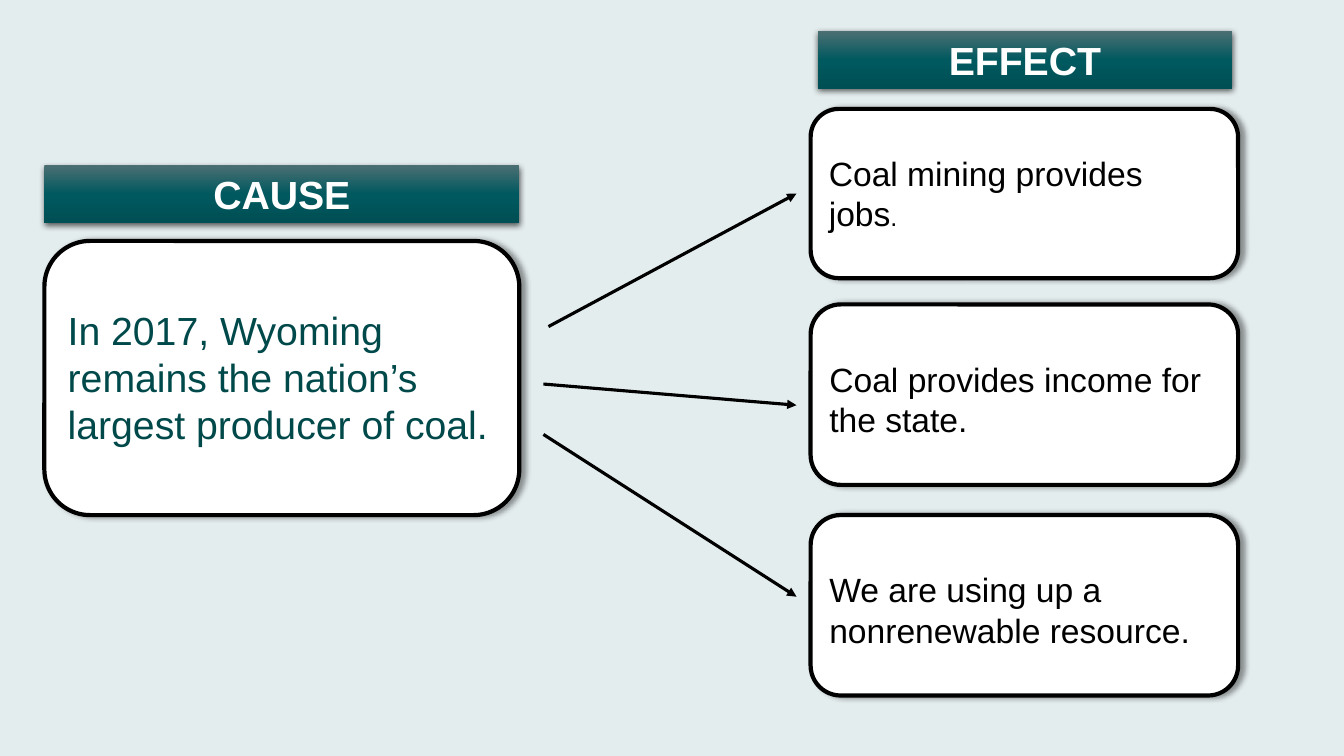
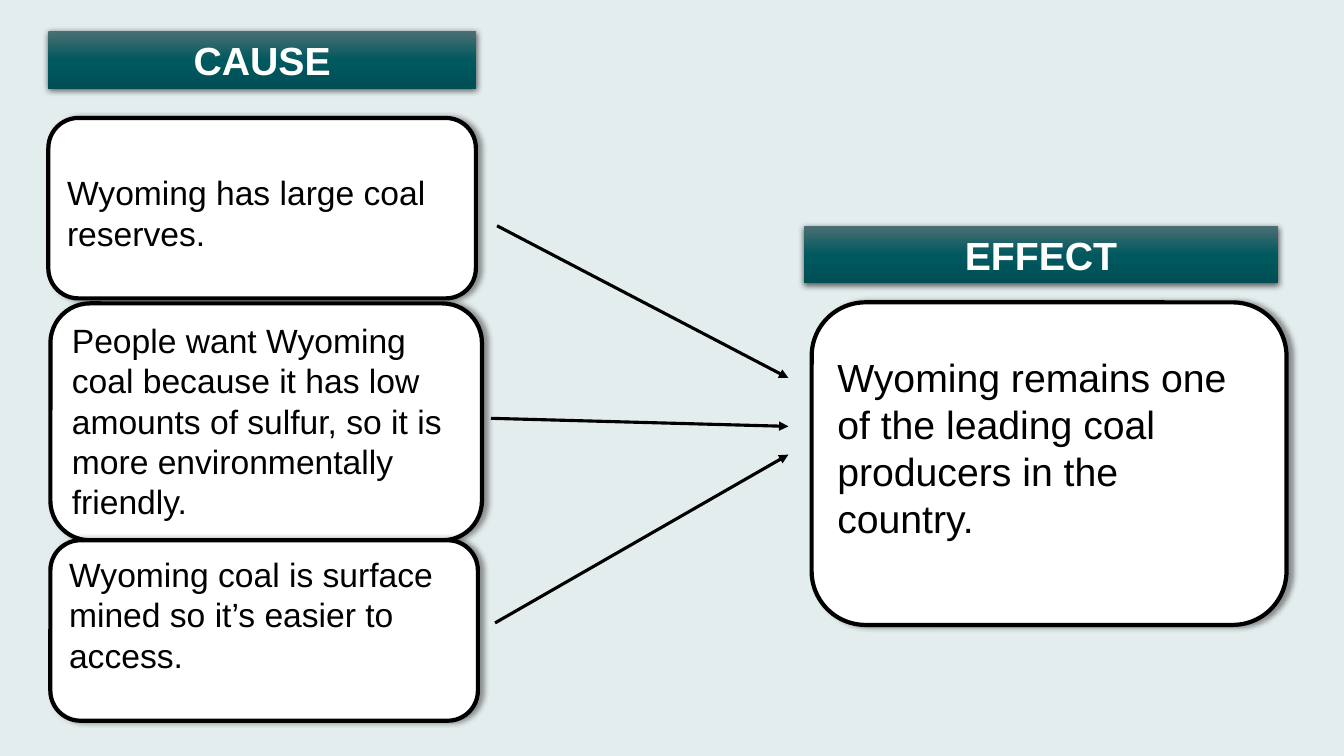
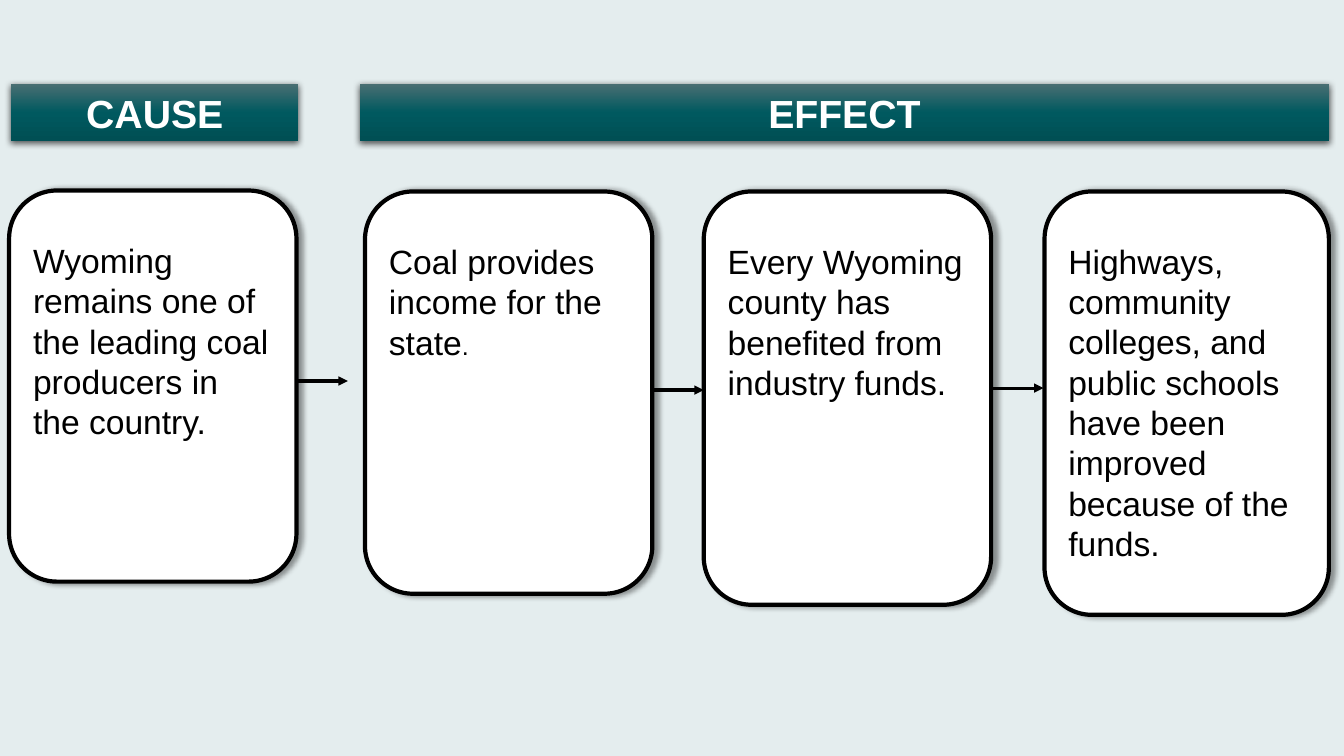
from copy import deepcopy

from pptx import Presentation
from pptx.dml.color import RGBColor
from pptx.enum.shapes import MSO_CONNECTOR as LINK, MSO_SHAPE as FORM
from pptx.enum.text import MSO_ANCHOR as ANCHOR, PP_ALIGN as ALIGN
from pptx.oxml.ns import qn
from pptx.oxml.xmlchemy import OxmlElement as Node
from pptx.util import Inches, Pt

PALE = RGBColor(0xE4, 0xED, 0xEE)
WHITE = RGBColor(0xFF, 0xFF, 0xFF)
BLACK = RGBColor(0, 0, 0)
TEAL = RGBColor(0x00, 0x49, 0x4A)
SHADES = [(0, RGBColor(0x4B, 0x6F, 0x73)),
          (0.5, RGBColor(0x00, 0x59, 0x5F)),
          (1, RGBColor(0x00, 0x4F, 0x54))]
LEAD = 1.2  # line height over font size

# Shadows in points, degrees and percent
SOFT = {"blur": 4, "dist": 3, "dir": 0, "alpha": 40}
DEEP = {"blur": 4.5, "dist": 1.5, "dir": 90, "alpha": 63}

# Each slide: bands (text, at), boxes (text, at, gap above text in points,
# formats that differ), arrows (from, to)
BIG = {"size": 28}
SLIDES = [
    {"bands": [("CAUSE", (0.44, 1.64, 4.71, 0.57)),
               ("EFFECT", (8.11, 0.31, 4.11, 0.57))],
     "boxes": [
         ("In 2017, Wyoming remains the nation’s largest producer of coal.",
          (0.44, 2.39, 4.71, 2.72), 28, {"size": 28, "color": TEAL}),
         ("Coal provides income for the state.",
          (8.04, 3.02, 4.24, 1.79), 24, {}),
         ("Coal mining provides jobs.",
          (8.04, 1.08, 4.24, 1.68), 18, {"dot": 18}),
         ("We are using up a nonrenewable resource.",
          (8.04, 5.11, 4.24, 1.79), 24, {})],
     "arrows": [((5.44, 3.24), (7.9, 1.92)),
                ((5.39, 3.81), (7.9, 4.02)),
                ((5.39, 4.31), (7.9, 5.92))]},
    {"bands": [("EFFECT", (7.97, 2.24, 4.71, 0.57)),
               ("CAUSE", (0.48, 0.31, 4.24, 0.57))],
     "boxes": [
         ("Wyoming remains one of the leading coal producers in the country.",
          (8.05, 3, 4.71, 3.2), 18, BIG),
         ("People want Wyoming coal because it has low amounts of sulfur, "
          "so it is more environmentally friendly.",
          (0.5, 3.01, 4.28, 2.35), 0, {}),
         ("Wyoming has large coal reserves.",
          (0.48, 1.17, 4.24, 1.79), 24, {}),
         ("Wyoming coal is surface mined so it’s easier to access.",
          (0.5, 5.36, 4.24, 1.79), 0, {})],
     "arrows": [((4.93, 2.24), (7.82, 3.75)),
                ((4.87, 4.15), (7.82, 4.23)),
                ((4.91, 6.18), (7.82, 4.51))]},
    {"bands": [("CAUSE", (0.11, 0.83, 2.85, 0.57)),
               ("EFFECT", (3.57, 0.83, 9.61, 0.57))],
     "boxes": [
         ("Wyoming remains one of the leading coal producers in the country.",
          (0.09, 1.89, 2.85, 3.88), 18, {}),
         ("Every Wyoming county has benefited from industry funds.",
          (6.98, 1.9, 2.85, 4.1), 18, {}),
         ("Coal provides income for the state.",
          (3.62, 1.9, 2.85, 3.99), 18, {"dot": 18}),
         ("Highways, community colleges, and public schools have been "
          "improved because of the funds.",
          (10.36, 1.9, 2.82, 4.2), 18, {})],
     "arrows": [((2.94, 3.78), (3.45, 3.78)),
                ((6.47, 3.87), (6.98, 3.87)),
                ((9.84, 3.85), (10.35, 3.85))]},
]


def add_form(slide, kind, at, glow):
    """Add a preset shape with an outer shadow."""
    form = slide.shapes.add_shape(kind, *map(Inches, at))
    form.shadow.inherit = False
    cast = Node("a:outerShdw")
    for key, value in {"blurRad": Pt(glow["blur"]), "dist": Pt(glow["dist"]),
                       "dir": glow["dir"] * 60000, "algn": "ctr",
                       "rotWithShape": 0}.items():
        cast.set(key, str(value))
    tint = Node("a:srgbClr")
    tint.set("val", str(BLACK))
    alpha = Node("a:alpha")
    alpha.set("val", str(glow["alpha"] * 1000))
    tint.append(alpha)
    cast.append(tint)
    form._element.spPr.find(qn("a:effectLst")).append(cast)
    return form


def write(form, parts, align, anchor, color, bold=False):
    """Fill a shape with one paragraph of (text, size) runs."""
    frame = form.text_frame
    frame.word_wrap = True
    frame.vertical_anchor = anchor
    para = frame.paragraphs[0]
    para.alignment = align
    para.line_spacing = Pt(LEAD * parts[0][1])
    for text, size in parts:
        run = para.add_run()
        run.text = text
        look = {"name": "Arial", "size": Pt(size), "bold": bold}
        for key, value in look.items():
            setattr(run.font, key, value)
        run.font.color.rgb = color


deck = Presentation()
deck.slide_width, deck.slide_height = Inches(13.33), Inches(7.5)
ground = deck.slide_master.background.fill
ground.solid()
ground.fore_color.rgb = PALE

for plan in SLIDES:
    slide = deck.slides.add_slide(deck.slide_layouts[6])

    # Rounded boxes
    for text, at, gap, extra in plan["boxes"]:
        look = {"size": 24, "color": BLACK, "dot": None, **extra}
        box = add_form(slide, FORM.ROUNDED_RECTANGLE, at, SOFT)
        box.fill.solid()
        box.fill.fore_color.rgb = WHITE
        box.line.color.rgb = BLACK
        box.line.width = Pt(3)
        box.text_frame.margin_top = Inches(0.05) + Pt(LEAD * gap)
        parts = [(text, look["size"])]
        if look["dot"]:
            parts = [(text[:-1], look["size"]), (text[-1], look["dot"])]
        write(box, parts, ALIGN.LEFT, ANCHOR.TOP, look["color"])

    # Arrows
    for start, end in plan["arrows"]:
        arrow = slide.shapes.add_connector(
            LINK.STRAIGHT, *map(Inches, start + end))
        arrow.line.color.rgb = BLACK
        arrow.line.width = Pt(2.25)
        tip = Node("a:tailEnd")
        tip.set("type", "triangle")
        arrow.line._get_or_add_ln().append(tip)
        arrow._element.spPr.append(Node("a:effectLst"))

    # Heading bands
    for text, at in plan["bands"]:
        band = add_form(slide, FORM.RECTANGLE, at, DEEP)
        band.line.fill.background()
        band.fill.gradient()
        band.fill.gradient_angle = 270
        stops = band._element.spPr.find(".//" + qn("a:gsLst"))
        stops.insert(1, deepcopy(stops[0]))
        for stop, (place, shade) in zip(band.fill.gradient_stops, SHADES):
            stop.position = place
            stop.color.rgb = shade
        write(band, [(text, 28)], ALIGN.CENTER, ANCHOR.MIDDLE, WHITE, True)

deck.save("out.pptx")
